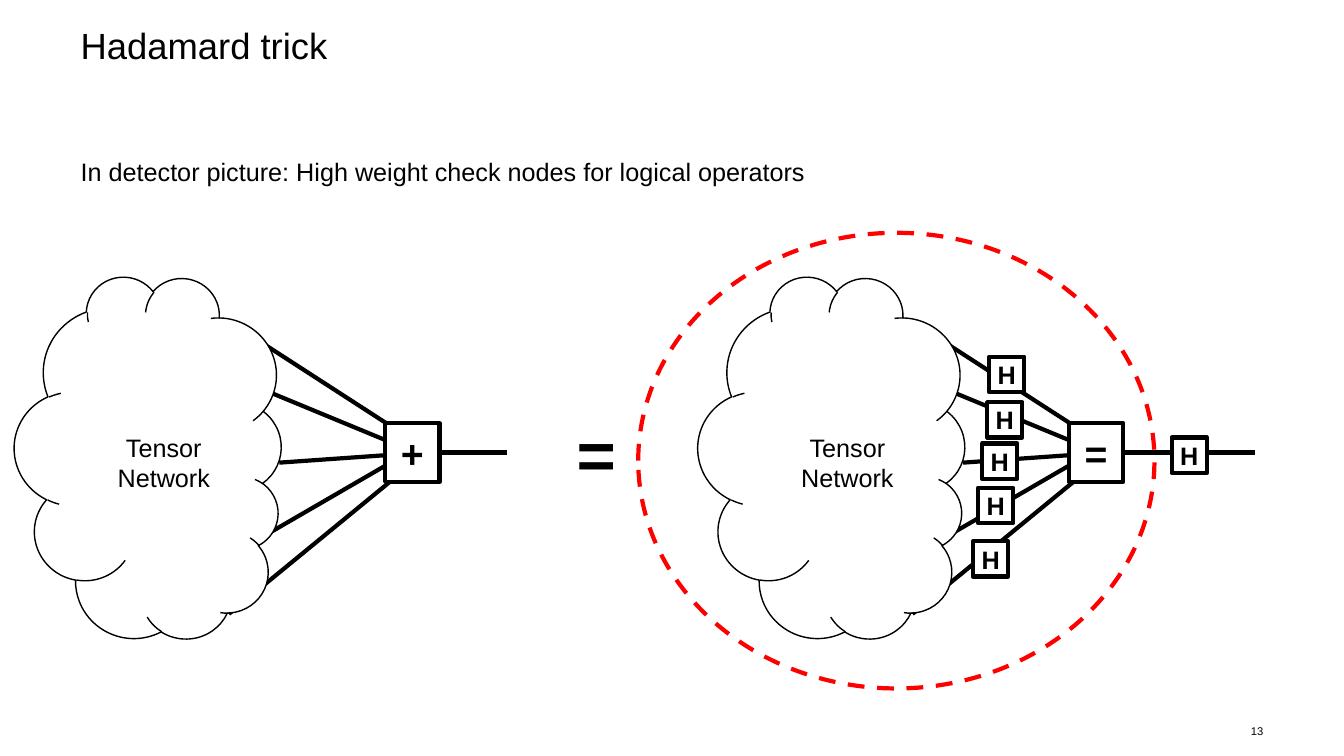
from dataclasses import dataclass

from lxml import etree
from pptx import Presentation
from pptx.dml.color import RGBColor
from pptx.enum import dml, shapes, text
from pptx.oxml import ns
from pptx.util import Inches, Pt


@dataclass(frozen=True)
class Theme:
    font: str = "Arial"
    ink: RGBColor = RGBColor(0, 0, 0)
    paper: RGBColor = RGBColor(255, 255, 255)
    highlight: RGBColor = RGBColor(255, 0, 0)
    title: int = 26
    body: int = 18
    node: int = 28
    equals: int = 48
    page: int = 8
    thick: int = 3
    thin: int = 1


theme = Theme()
deck = Presentation()
deck.slide_width, deck.slide_height = Inches(13.33), Inches(7.5)
slide = deck.slides.add_slide(deck.slide_layouts[6])


def write(shape, wording, size=theme.body, bold=False, align=text.PP_ALIGN.LEFT,
          anchor=text.MSO_ANCHOR.TOP, wrap=True, spacing=None):
    """Fill a shape with text, one paragraph per line."""
    frame = shape.text_frame
    frame.text = wording
    frame.word_wrap, frame.vertical_anchor = wrap, anchor
    frame.margin_left = frame.margin_right = frame.margin_top = frame.margin_bottom = 0
    for paragraph in frame.paragraphs:
        paragraph.alignment, paragraph.line_spacing = align, spacing
        font = paragraph.font
        font.name, font.size, font.bold = theme.font, Pt(size), bold
        font.color.rgb = theme.ink


def draw(kind, left, top, width, height, weight=theme.thick, color=theme.ink):
    """Add a white, outlined shape."""
    shape = slide.shapes.add_shape(kind, Inches(left), Inches(top), Inches(width), Inches(height))
    shape.shadow.inherit = False
    shape.fill.solid()
    shape.fill.fore_color.rgb = theme.paper
    shape.line.color.rgb, shape.line.width = color, Pt(weight)
    return shape


box = slide.shapes.add_textbox
rectangle = shapes.MSO_SHAPE.RECTANGLE
centered = dict(align=text.PP_ALIGN.CENTER, anchor=text.MSO_ANCHOR.MIDDLE, bold=True, wrap=False)

# Heading, statement and page number
write(box(Inches(0.8), Inches(0.28), Inches(11.73), Inches(0.98)),
      "Hadamard trick", size=theme.title, spacing=0.9)
write(box(Inches(0.8), Inches(1.55), Inches(11.73), Inches(0.79)),
      "In detector picture: High weight check nodes for logical operators")
write(box(Inches(12.18), Inches(7.13), Inches(0.35), Inches(0.24)), "13", size=theme.page,
      align=text.PP_ALIGN.RIGHT, anchor=text.MSO_ANCHOR.MIDDLE)

# Dashed region around the right-hand network
region = draw(shapes.MSO_SHAPE.OVAL, 6.33, 2.31, 5.12, 4.52, color=theme.highlight)
region.fill.background()
region.line.dash_style = dml.MSO_LINE.DASH

# Each network: legs, check node, output wire, Hadamard gates, cloud
legs = [(2.38, 3.26, 4.05, 4.34), (2.67, 3.89, 4.05, 4.46), (2.77, 4.59, 4.05, 4.5),
        (2.58, 5.34, 3.96, 4.54), (2.27, 6.09, 4.05, 4.63)]
gates = [(9.81, 3.54), (9.79, 3.99), (9.74, 4.4), (9.7, 4.84), (9.65, 5.37), (11.62, 4.34)]
networks = [(0, "+", 5.03, []), (6.78, "=", 12.45, gates)]
wire_y = 4.49

for shift, symbol, wire_end, hadamards in networks:
    wires = legs + [(4.36, wire_y, wire_end - shift, wire_y)]
    for x1, y1, x2, y2 in wires:
        wire = slide.shapes.add_connector(
            shapes.MSO_CONNECTOR.STRAIGHT,
            Inches(x1 + shift), Inches(y1), Inches(x2 + shift), Inches(y2))
        wire.line.color.rgb, wire.line.width = theme.ink, Pt(theme.thick)
        etree.SubElement(wire._element.spPr, ns.qn("a:effectLst"))

    check = draw(rectangle, 3.82 + shift, 4.2, 0.54, 0.58)
    write(check, symbol, size=theme.node, **centered)
    wire.begin_connect(check, 3)  # the last wire is the output

    for left, top in hadamards:
        write(draw(rectangle, left, top, 0.35, 0.35), "H", **centered)

    cloud = draw(shapes.MSO_SHAPE.CLOUD, shift - 0.31, 3.19, 3.61, 2.7, weight=theme.thin)
    cloud.rotation = 99.4
    write(box(Inches(1.16 + shift), Inches(4.29), Inches(0.93), Inches(0.61)),
          "Tensor\nNetwork", align=text.PP_ALIGN.CENTER, wrap=False)

# Equality between the two networks
write(box(Inches(5.72), Inches(4.09), Inches(0.39), Inches(0.81)), "=",
      size=theme.equals, bold=True, wrap=False)

deck.save("out.pptx")
